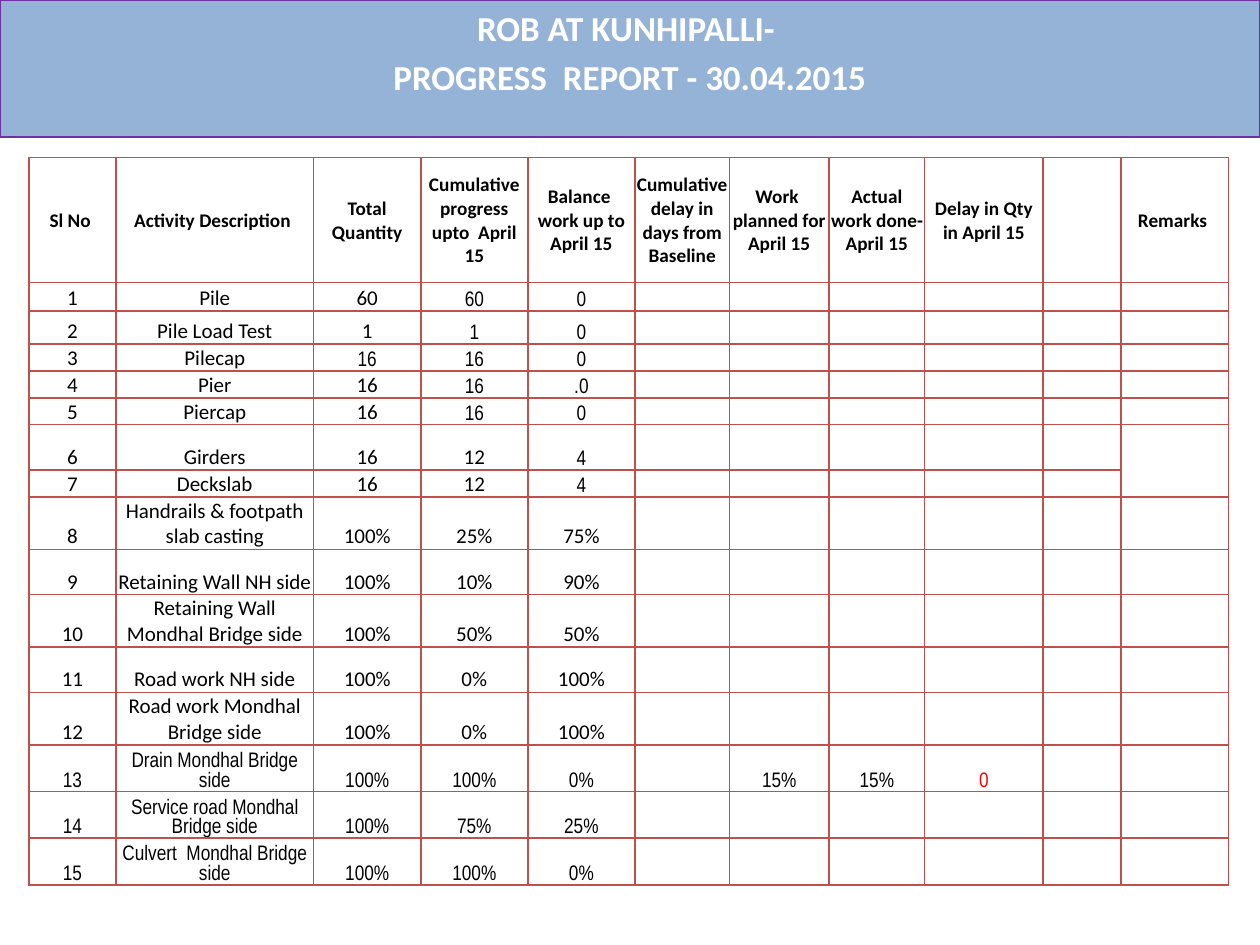
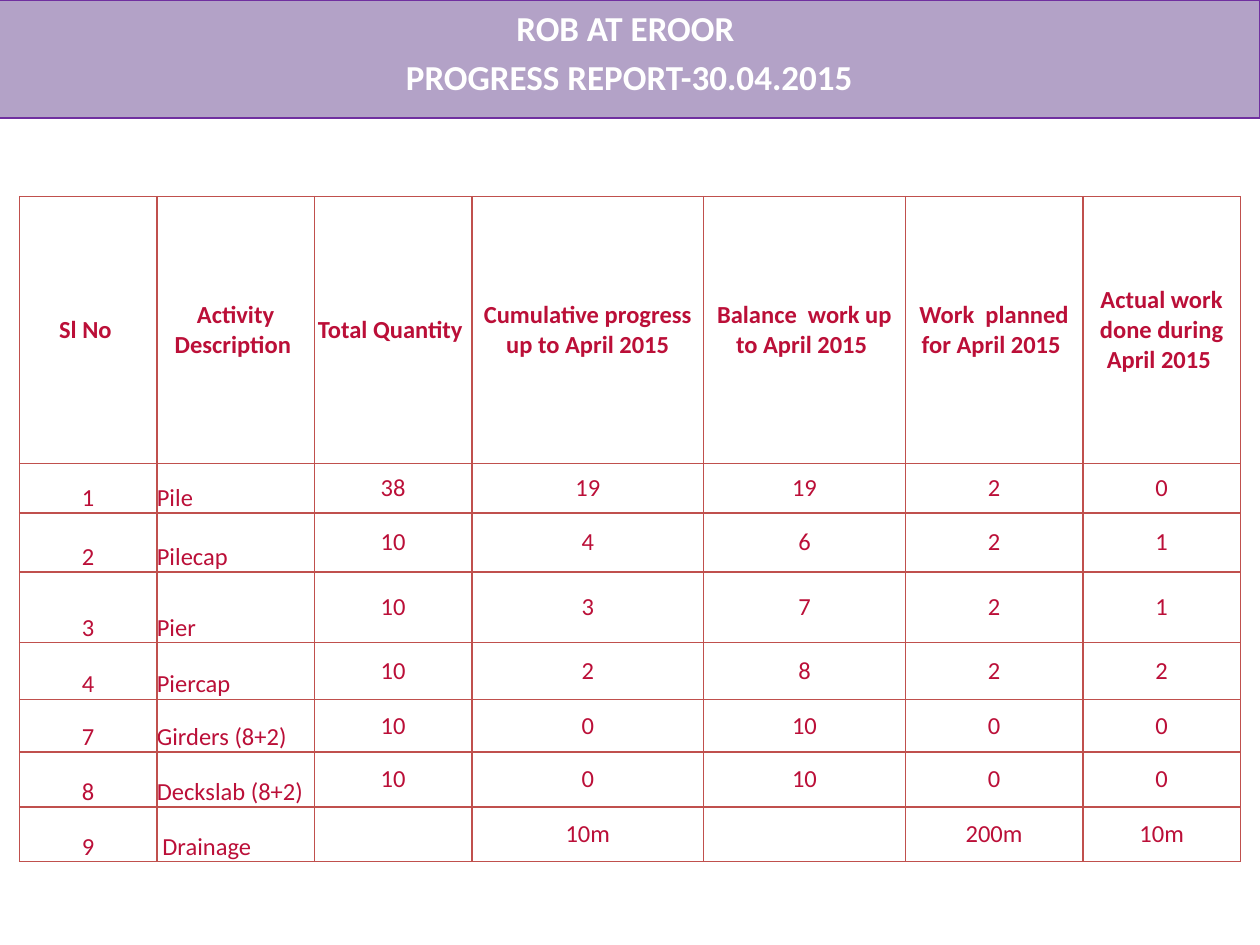
from dataclasses import dataclass
from itertools import product

import pptx
import pptx.dml.color
import pptx.enum.shapes
import pptx.enum.text
import pptx.oxml
import pptx.oxml.ns
import pptx.util
from lxml import etree

Align = pptx.enum.text.PP_ALIGN
Anchor = pptx.enum.text.MSO_ANCHOR
Position = tuple[int, int]


@dataclass(frozen=True)
class Theme:
    width: float = 10
    height: float = 7.5
    font: str = "Calibri"
    narrow_font: str = "Arial Narrow"
    title_size: int = 20
    title_gap: int = 4
    title_color: str = "FFFFFF"
    band_line: str = "7030A0"
    band_line_width: float = 0.75
    grid_line: str = "C0504D"
    grid_line_width: int = 1
    alert: str = "FF0000"


@dataclass(frozen=True)
class Band:
    lines: tuple[str, str]
    color: str
    height: float
    left: float = 0


@dataclass(frozen=True)
class ProgressTable:
    left: float
    top: float
    columns: tuple[float, ...]
    rows: tuple[float, ...]
    headings: tuple[str, ...]
    activities: tuple[tuple[str, ...], ...]
    color: str
    heading_size: int
    body_size: int
    margin: float
    bottom_columns: frozenset[int]
    left_columns: frozenset[int] = frozenset()
    narrow: frozenset[Position] = frozenset()
    alerts: frozenset[Position] = frozenset()
    merges: tuple[tuple[Position, Position], ...] = ()


@dataclass(frozen=True)
class Report:
    band: Band
    table: ProgressTable


THEME = Theme()


def across(percent: float) -> int:
    return pptx.util.Inches(THEME.width * percent / 100)


def down(percent: float) -> int:
    return pptx.util.Inches(THEME.height * percent / 100)


def rgb(color: str) -> pptx.dml.color.RGBColor:
    return pptx.dml.color.RGBColor.from_string(color)


def set_font(paragraph, name: str, size: int, color: str, bold: bool) -> None:
    font = paragraph.font
    font.name = name
    font.size = pptx.util.Pt(size)
    font.bold = bold
    font.color.rgb = rgb(color)


def draw_band(slide, band: Band) -> None:
    title = slide.shapes.add_shape(
        pptx.enum.shapes.MSO_SHAPE.RECTANGLE,
        across(band.left), 0, across(100 - band.left), down(band.height),
    )
    title.shadow.inherit = False
    title.fill.solid()
    title.fill.fore_color.rgb = rgb(band.color)
    title.line.color.rgb = rgb(THEME.band_line)
    title.line.width = pptx.util.Pt(THEME.band_line_width)
    frame = title.text_frame
    frame.word_wrap = True
    frame.vertical_anchor = Anchor.TOP
    frame.text = "\n".join(band.lines)
    for paragraph in frame.paragraphs:
        paragraph.alignment = Align.CENTER
        paragraph.space_before = pptx.util.Pt(THEME.title_gap)
        set_font(paragraph, THEME.font, THEME.title_size, THEME.title_color, True)


def draw_borders(cell) -> None:
    properties = cell._tc.get_or_add_tcPr()
    for side in ("a:lnL", "a:lnR", "a:lnT", "a:lnB"):
        border = etree.SubElement(
            properties, pptx.oxml.ns.qn(side),
            w=str(pptx.util.Pt(THEME.grid_line_width)),
        )
        fill = etree.SubElement(border, pptx.oxml.ns.qn("a:solidFill"))
        etree.SubElement(fill, pptx.oxml.ns.qn("a:srgbClr"), val=THEME.grid_line)


def draw_cell(cell, text: str, position: Position, plan: ProgressTable) -> None:
    row, column = position
    heading = row == 0
    draw_borders(cell)
    cell.fill.background()
    cell.margin_left = cell.margin_right = cell.margin_top = pptx.util.Inches(plan.margin)
    cell.margin_bottom = 0
    at_bottom = not heading and column in plan.bottom_columns
    cell.vertical_anchor = Anchor.BOTTOM if at_bottom else Anchor.MIDDLE
    cell.text = text
    paragraph = cell.text_frame.paragraphs[0]
    at_left = not heading and column in plan.left_columns
    paragraph.alignment = Align.LEFT if at_left else Align.CENTER
    set_font(
        paragraph,
        THEME.narrow_font if position in plan.narrow else THEME.font,
        plan.heading_size if heading else plan.body_size,
        THEME.alert if position in plan.alerts else plan.color,
        heading,
    )


def draw_table(slide, plan: ProgressTable) -> None:
    table = slide.shapes.add_table(
        len(plan.rows), len(plan.columns),
        across(plan.left), down(plan.top),
        across(sum(plan.columns)), down(sum(plan.rows)),
    ).table
    table.first_row = table.horz_banding = False
    for column, width in zip(table.columns, plan.columns):
        column.width = across(width)
    for row, height in zip(table.rows, plan.rows):
        row.height = down(height)
    for row, texts in enumerate((plan.headings, *plan.activities)):
        for column in range(len(plan.columns)):
            text = texts[column] if column < len(texts) else ""
            draw_cell(table.cell(row, column), text, (row, column), plan)
    for first, last in plan.merges:
        table.cell(*first).merge(table.cell(*last))


KUNHIPALLI = Report(
    Band(("ROB AT KUNHIPALLI- ", "PROGRESS  REPORT - 30.04.2015"), "95B3D7", 14.5),
    ProgressTable(
        left=2.3,
        top=16.67,
        columns=(6.9, 15.7, 8.5, 8.5, 8.5, 7.5, 7.9, 7.6, 9.4, 6.2, 8.5),
        rows=(13.2, 3.07, 3.47, *(2.4,) * 3, 4.8, 2.4, 4.8, 4.8, 5.2, 4.8, *(4.93,) * 4),
        headings=(
            "Sl No ", "Activity Description ", "Total Quantity",
            "Cumulative progress upto  April 15", "Balance  work up to April 15",
            "Cumulative delay in days from Baseline", "Work  planned for April 15",
            "Actual work done-April 15", "Delay in Qty in April 15", "", "Remarks ",
        ),
        activities=(
            ("1", "Pile", "60", "60", "0"),
            ("2", "Pile Load Test", "1", "1", "0"),
            ("3", "Pilecap", "16", "16", "0"),
            ("4", "Pier", "16", "16", ".0"),
            ("5", "Piercap", "16", "16", "0"),
            ("6", "Girders", "16", "12", "4"),
            ("7", "Deckslab", "16", "12", "4"),
            ("8", "Handrails & footpath slab casting", "100%", "25%", "75%"),
            ("9", "Retaining Wall NH side", "100%", "10%", "90%"),
            ("10", "Retaining Wall Mondhal Bridge side", "100%", "50%", "50%"),
            ("11", "Road work NH side", "100%", "0%", "100%"),
            ("12", "Road work Mondhal Bridge side", "100%", "0%", "100%"),
            ("13", "Drain Mondhal Bridge side", "100%", "100%", "0%", "", "15%", "15%", "0"),
            ("14", "Service road Mondhal Bridge side", "100%", "75%", "25%"),
            ("15", "Culvert  Mondhal Bridge side", "100%", "100%", "0%"),
        ),
        color="000000",
        heading_size=11,
        body_size=12,
        margin=0.01,
        bottom_columns=frozenset(range(11)),
        narrow=frozenset({
            (3, 2),
            *product(range(1, 6), (3,)),
            *product(range(1, 8), (4,)),
            *product(range(13, 16), range(11)),
        }),
        alerts=frozenset({(13, 8)}),
        merges=(((6, 10), (7, 10)),),
    ),
)

EROOR = Report(
    Band(("ROB AT EROOR ", "PROGRESS REPORT-30.04.2015"), "B3A2C7", 12.5, left=-0.1),
    ProgressTable(
        left=1.55,
        top=20.8,
        columns=(10.9, 12.5, 12.5, 18.4, 16, 14.1, 12.5),
        rows=(28.27, 5.2, 6.27, 7.47, 6, 5.6, 5.8, 5.8),
        headings=(
            "Sl No ", "Activity Description ", "Total Quantity ",
            "Cumulative progress up to April 2015", "Balance  work up to April 2015 ",
            "Work  planned for April 2015 ", "Actual work done during April 2015 ",
        ),
        activities=(
            ("1", "Pile", "38", "19", "19", "2", "0"),
            ("2", "Pilecap", "10", "4", "6", "2", "1"),
            ("3", "Pier", "10", "3", "7", "2", "1"),
            ("4", "Piercap", "10", "2", "8", "2", "2"),
            ("7", "Girders (8+2)", "10", "0", "10", "0", "0"),
            ("8", "Deckslab (8+2)", "10", "0", "10", "0", "0"),
            ("9", " Drainage", "", "10m", "", "200m", "10m"),
        ),
        color="BB0F38",
        heading_size=14,
        body_size=14,
        margin=0,
        bottom_columns=frozenset({0, 1}),
        left_columns=frozenset({1}),
    ),
)


def main() -> None:
    presentation = pptx.Presentation()
    presentation.slide_width = pptx.util.Inches(THEME.width)
    presentation.slide_height = pptx.util.Inches(THEME.height)
    for report in (KUNHIPALLI, EROOR):
        slide = presentation.slides.add_slide(presentation.slide_layouts[6])
        draw_band(slide, report.band)
        draw_table(slide, report.table)
    presentation.save("out.pptx")


if __name__ == "__main__":
    main()
